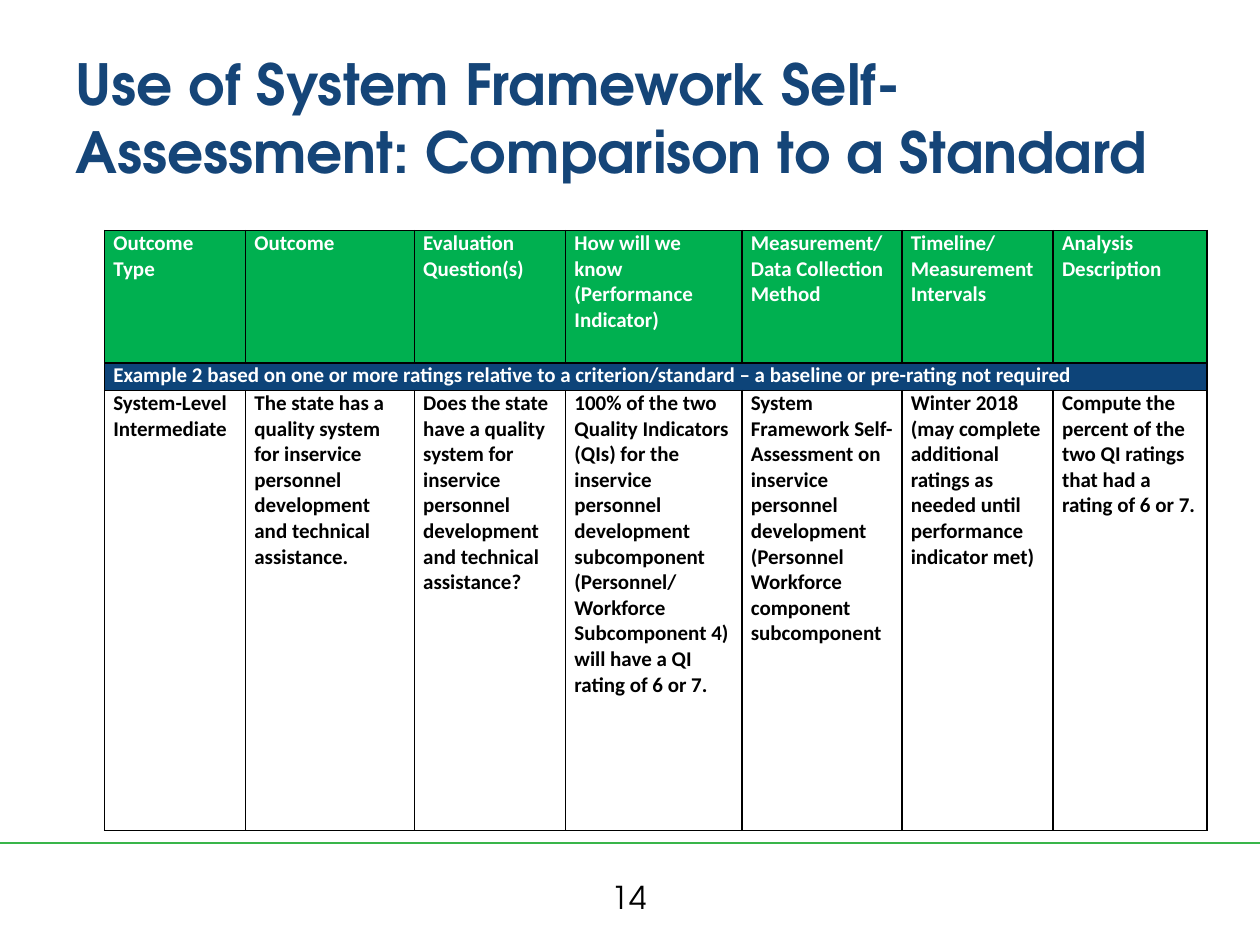
from lxml import etree
from pptx import Presentation
from pptx.dml.color import RGBColor
from pptx.enum.shapes import MSO_CONNECTOR
from pptx.enum.text import MSO_ANCHOR, PP_ALIGN
from pptx.oxml import parse_xml
from pptx.oxml.ns import nsdecls, qn
from pptx.util import Inches, Pt

NAVY, GREEN, BLUE = "154578", "00B050", "0D4479"
RULE_GREEN, BLACK, WHITE = "39B54A", "000000", "FFFFFF"
HEADING_FONT, TABLE_FONT = "TeX Gyre Adventor", "Calibri"

COLUMN_WIDTHS = [1.12, 1.34, 1.2, 1.4, 1.27, 1.2, 1.22]
ROW_HEIGHTS = [1.05, 0.22, 3.49]
HEADERS = [
    "Outcome Type",
    "Outcome",
    "Evaluation Question(s)",
    "How will we know\n(Performance Indicator)",
    "Measurement/\nData Collection Method",
    "Timeline/\nMeasurement Intervals",
    "Analysis Description",
]
EXAMPLE_BANNER = ("Example 2 based on one or more ratings relative to a "
                  "criterion/standard – a baseline or pre-rating not required")
EXAMPLE = [
    "System-Level\nIntermediate",
    "The state has a quality system for inservice personnel development "
    "and technical assistance.",
    "Does the state have a quality system for inservice personnel "
    "development and technical assistance?",
    "100% of the two Quality Indicators (QIs) for the inservice personnel "
    "development subcomponent (Personnel/\n"
    "Workforce Subcomponent 4) will have a QI rating of 6 or 7.",
    "System Framework Self-Assessment on inservice personnel development "
    "(Personnel Workforce component subcomponent",
    "Winter 2018\n(may complete additional ratings as needed until "
    "performance indicator met)",
    "Compute the percent of the two QI ratings that had a rating of 6 or 7.",
]


def rgb(value):
    return RGBColor.from_string(value)


def style_paragraphs(frame, font_name, size, color, bold=False, align=PP_ALIGN.LEFT):
    for paragraph in frame.paragraphs:
        paragraph.alignment = align
        font = paragraph.font
        font.name, font.size, font.bold = font_name, Pt(size), bold
        font.color.rgb = rgb(color)


def add_label(slide, text, left, top, width, height, anchor, **style):
    box = slide.shapes.add_textbox(Inches(left), Inches(top), Inches(width), Inches(height))
    frame = box.text_frame
    frame.word_wrap = True
    frame.vertical_anchor = anchor
    frame.text = text
    style_paragraphs(frame, HEADING_FONT, **style)


def add_footer(slide, top, page):
    rule = slide.shapes.add_connector(
        MSO_CONNECTOR.STRAIGHT, 0, Inches(top), Inches(10), Inches(top))
    rule.line.color.rgb = rgb(RULE_GREEN)
    rule.line.width = Pt(1.5)
    etree.SubElement(rule._element.spPr, qn("a:effectLst"))
    add_label(slide, page, 3.83, top + 0.23, 2.33, 0.4, MSO_ANCHOR.TOP,
              size=18, color=BLACK, align=PP_ALIGN.CENTER)


def set_borders(cell, color, width):
    properties = cell._tc.get_or_add_tcPr()
    for index, side in enumerate(("lnL", "lnR", "lnT", "lnB")):
        properties.insert(index, parse_xml(
            f'<a:{side} {nsdecls("a")} w="{Pt(width)}"><a:solidFill>'
            f'<a:srgbClr val="{color}"/></a:solidFill></a:{side}>'))


def style_cell(cell, fill, color):
    cell.margin_left = cell.margin_right = Inches(0.07)
    cell.margin_top = cell.margin_bottom = 0
    if fill:
        cell.fill.solid()
        cell.fill.fore_color.rgb = rgb(fill)
    else:
        cell.fill.background()
    style_paragraphs(cell.text_frame, TABLE_FONT, 12, color, bold=True)
    set_borders(cell, BLACK, 1)


def add_evaluation_table(slide, left, top):
    table = slide.shapes.add_table(
        len(ROW_HEIGHTS), len(COLUMN_WIDTHS), Inches(left), Inches(top),
        Inches(sum(COLUMN_WIDTHS)), Inches(sum(ROW_HEIGHTS))).table
    for column, width in zip(table.columns, COLUMN_WIDTHS):
        column.width = Inches(width)
    for row, height in zip(table.rows, ROW_HEIGHTS):
        row.height = Inches(height)

    banner_row = [EXAMPLE_BANNER] + [""] * (len(COLUMN_WIDTHS) - 1)
    rows = [(HEADERS, GREEN, WHITE), (banner_row, BLUE, WHITE), (EXAMPLE, None, BLACK)]
    for row, (texts, fill, color) in zip(table.rows, rows):
        for cell, text in zip(row.cells, texts):
            cell.text = text
            style_cell(cell, fill, color)
    table.cell(1, 0).merge(table.cell(1, len(COLUMN_WIDTHS) - 1))


def main():
    presentation = Presentation()
    presentation.slide_width, presentation.slide_height = Inches(10), Inches(7.5)
    slide = presentation.slides.add_slide(presentation.slide_layouts[6])
    add_footer(slide, 6.69, "14")
    add_label(slide, "Use of System Framework Self-Assessment: Comparison to a Standard",
              0.5, 0.3, 9, 1.25, MSO_ANCHOR.MIDDLE, size=32.4, color=NAVY, bold=True)
    add_evaluation_table(slide, 0.83, 1.83)
    presentation.save("out.pptx")


if __name__ == "__main__":
    main()
